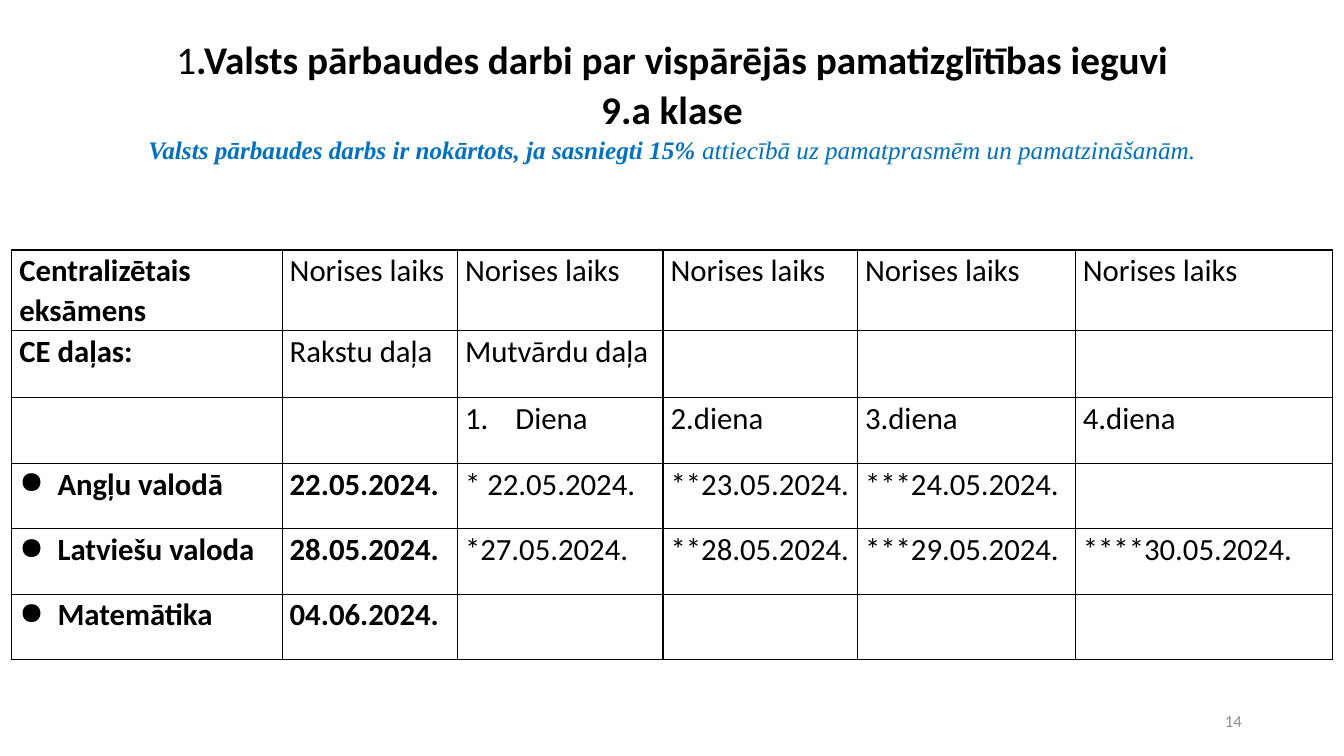
"""Build the slide with the schedule of the state examinations for grade 9.a."""
from lxml.etree import SubElement
from pptx import Presentation
from pptx.dml.color import RGBColor
from pptx.enum.text import MSO_ANCHOR, MSO_AUTO_SIZE, PP_ALIGN
from pptx.oxml import parse_xml
from pptx.oxml.ns import nsdecls, qn
from pptx.util import Cm, Pt

BLACK, BLUE, GREY = "000000", "0070C0", "8C8C8C"
BODY_FONT, NOTE_FONT = "Calibri", "Times New Roman"

TITLE_LINES = [
    [("1", 28, BODY_FONT, BLACK, False, False),
     (".Valsts pārbaudes darbi par vispārējās pamatizglītības ieguvi", 28, BODY_FONT, BLACK, True, False)],
    [("9.a klase", 28, BODY_FONT, BLACK, True, False)],
    [("Valsts pārbaudes darbs ir nokārtots, ja sasniegti 15% ", 18, NOTE_FONT, BLUE, True, True),
     ("attiecībā uz pamatprasmēm un pamatzināšanām.", 18, NOTE_FONT, BLUE, False, True)],
]
SCHEDULE = [
    ["Centralizētais eksāmens"] + ["Norises laiks"] * 5,
    ["CE daļas:", "Rakstu daļa", "Mutvārdu daļa", "", "", ""],
    ["", "", "Diena", "2.diena", "3.diena", "4.diena"],
    ["Angļu valodā", "22.05.2024.", "* 22.05.2024.", "**23.05.2024.", "***24.05.2024.", ""],
    ["Latviešu valoda", "28.05.2024.", "*27.05.2024.", "**28.05.2024.", "***29.05.2024.", "****30.05.2024."],
    ["Matemātika", "04.06.2024.", "", "", "", ""],
]
COLUMN_WIDTHS = [6.81, 4.42, 5.18, 4.9, 5.49, 6.48]
ROW_HEIGHTS = [1.65, 1.7, 1.65, 1.65, 1.65, 1.65]
FIRST_SUBJECT_ROW = 3
NUMBERED_CELL = (2, 2)
PAGE_NUMBER = "14"


def set_font(font, size, name, color, bold=False, italic=False):
    font.size, font.name, font.bold, font.italic = Pt(size), name, bold, italic
    font.color.rgb = RGBColor.from_string(color)


def set_spacing(paragraph):
    paragraph.line_spacing = 1.07
    paragraph.space_after = Pt(8)


def add_bullet(paragraph, indent, tag, **attributes):
    properties = paragraph._p.get_or_add_pPr()
    properties.set("marL", str(indent))
    properties.set("indent", str(-indent))
    SubElement(properties, qn(tag), **attributes)


def add_borders(cell):
    properties = cell._tc.get_or_add_tcPr()
    for position, side in enumerate(("lnL", "lnR", "lnT", "lnB")):
        properties.insert(position, parse_xml(
            f'<a:{side} {nsdecls("a")} w="{Pt(1)}"><a:solidFill>'
            f'<a:srgbClr val="{BLACK}"/></a:solidFill></a:{side}>'))


def fill_title(title):
    title.left, title.top, title.width, title.height = Cm(2.33), Cm(1.02), Cm(29.21), Cm(3.68)
    frame = title.text_frame
    frame.auto_size = MSO_AUTO_SIZE.NONE
    frame.vertical_anchor = MSO_ANCHOR.MIDDLE
    frame.margin_bottom = Cm(0.9)
    paragraph = frame.paragraphs[0]
    paragraph.alignment = PP_ALIGN.CENTER
    set_spacing(paragraph)
    for index, line in enumerate(TITLE_LINES):
        if index:
            paragraph.add_line_break()
        for text, *style in line:
            run = paragraph.add_run()
            run.text = text
            set_font(run.font, *style)


def fill_cell(cell, row, column, text):
    cell.fill.background()
    add_borders(cell)
    cell.margin_left = cell.margin_right = Cm(0.19)
    cell.margin_top = cell.margin_bottom = 0
    if not text:
        return
    paragraph = cell.text_frame.paragraphs[0]
    paragraph.text = text
    set_spacing(paragraph)
    is_subject_row = row >= FIRST_SUBJECT_ROW
    if (row, column) == NUMBERED_CELL:
        add_bullet(paragraph, Cm(1.27), "a:buAutoNum", type="arabicPeriod")
    elif is_subject_row and column == 0:
        add_bullet(paragraph, Cm(0.96), "a:buChar", char="●")
    bold = column == 0 or (is_subject_row and column == 1)
    set_font(paragraph.font, 22, BODY_FONT, BLACK, bold)


def add_schedule(slide):
    table = slide.shapes.add_table(
        len(SCHEDULE), len(COLUMN_WIDTHS), Cm(0.3), Cm(6.3),
        Cm(sum(COLUMN_WIDTHS)), Cm(sum(ROW_HEIGHTS))).table
    table.first_row = table.horz_banding = False
    for column, width in zip(table.columns, COLUMN_WIDTHS):
        column.width = Cm(width)
    for row, height in zip(table.rows, ROW_HEIGHTS):
        row.height = Cm(height)
    for row, texts in enumerate(SCHEDULE):
        for column, text in enumerate(texts):
            fill_cell(table.cell(row, column), row, column, text)


def add_page_number(slide):
    frame = slide.shapes.add_textbox(Cm(23.93), Cm(17.65), Cm(7.62), Cm(1.02)).text_frame
    frame.word_wrap = True
    frame.vertical_anchor = MSO_ANCHOR.MIDDLE
    paragraph = frame.paragraphs[0]
    paragraph.text = PAGE_NUMBER
    paragraph.alignment = PP_ALIGN.RIGHT
    set_font(paragraph.font, 12, BODY_FONT, GREY)


def main():
    presentation = Presentation()
    presentation.slide_width, presentation.slide_height = Cm(33.87), Cm(19.05)
    slide = presentation.slides.add_slide(presentation.slide_layouts[5])
    fill_title(slide.shapes.title)
    add_schedule(slide)
    add_page_number(slide)
    presentation.save("out.pptx")


if __name__ == "__main__":
    main()
